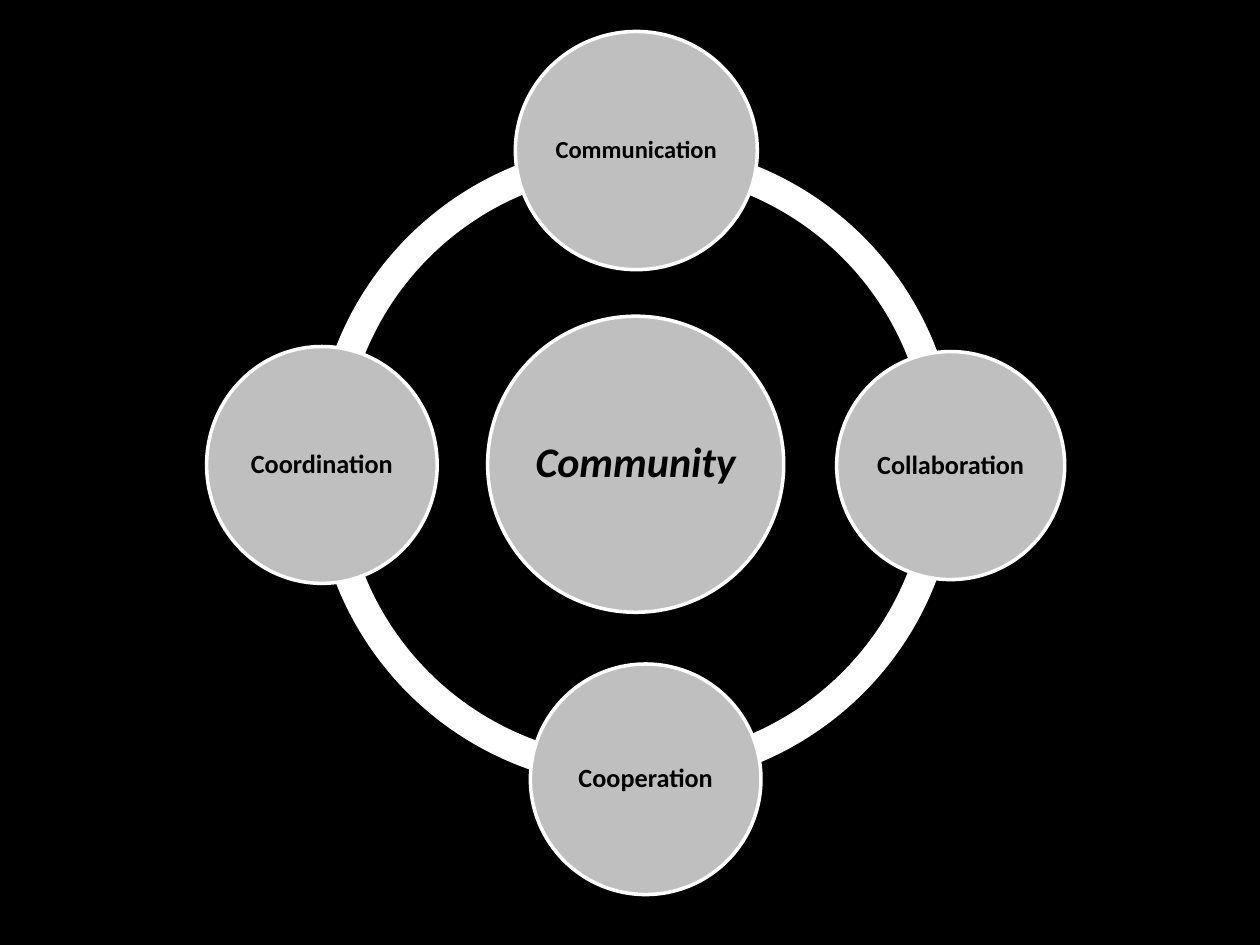
from pptx import Presentation
from pptx.dml.color import RGBColor
from pptx.enum.shapes import MSO_SHAPE
from pptx.enum.text import MSO_ANCHOR, PP_ALIGN
from pptx.util import Inches, Pt


def paint(color_format, color):
    color_format.rgb = RGBColor.from_string(color)


deck = Presentation()
deck.slide_width = Inches(10)
deck.slide_height = Inches(7.5)
page = deck.slides.add_slide(deck.slide_layouts[6])
page.background.fill.solid()
paint(page.background.fill.fore_color, "000000")
diagram = page.shapes.add_group_shape()

ring_size = 5.11
ring_thickness = 0.046
quarter_arcs = [
    (1.13, 108, 162),
    (1.14, 52.85, 108.02),
    (1.14, 215.98, 52.85),
    (1.13, 162, 0),
]
for top, start, end in quarter_arcs:
    arc = diagram.shapes.add_shape(
        MSO_SHAPE.BLOCK_ARC, Inches(2.49), Inches(top), Inches(ring_size), Inches(ring_size)
    )
    arc.shadow.inherit = False
    for index, value in enumerate((start, end, ring_thickness)):
        arc.adjustments[index] = value
    arc.fill.solid()
    paint(arc.fill.fore_color, "FFFFFF")
    arc.line.fill.background()

circles = [
    ("Community", 3.87, 2.51, 2.35, 2.35, 24, 0.03),
    ("Communication", 4.09, 0.25, 1.92, 1.89, 14, 0.02),
    ("Collaboration", 6.64, 2.79, 1.81, 1.81, 15, 0.02),
    ("Cooperation", 4.21, 5.27, 1.83, 1.83, 15, 0.02),
    ("Coordination", 1.64, 2.75, 1.83, 1.88, 15, 0.02),
]
for label, left, top, width, height, size, inset in circles:
    circle = diagram.shapes.add_shape(
        MSO_SHAPE.OVAL, Inches(left), Inches(top), Inches(width), Inches(height)
    )
    circle.shadow.inherit = False
    circle.fill.solid()
    paint(circle.fill.fore_color, "BFBFBF")
    paint(circle.line.color, "FFFFFF")
    circle.line.width = Pt(2)

    frame = circle.text_frame
    frame.word_wrap = True
    frame.vertical_anchor = MSO_ANCHOR.MIDDLE
    frame.margin_left = frame.margin_right = Inches(inset)
    frame.margin_top = frame.margin_bottom = Inches(inset)
    para = frame.paragraphs[0]
    para.alignment = PP_ALIGN.CENTER
    para.line_spacing = 0.9
    span = para.add_run()
    span.text = label
    span.font.name = "Calibri"
    span.font.size = Pt(size)
    span.font.bold = True
    span.font.italic = label == "Community"
    paint(span.font.color, "000000")

deck.save("out.pptx")
